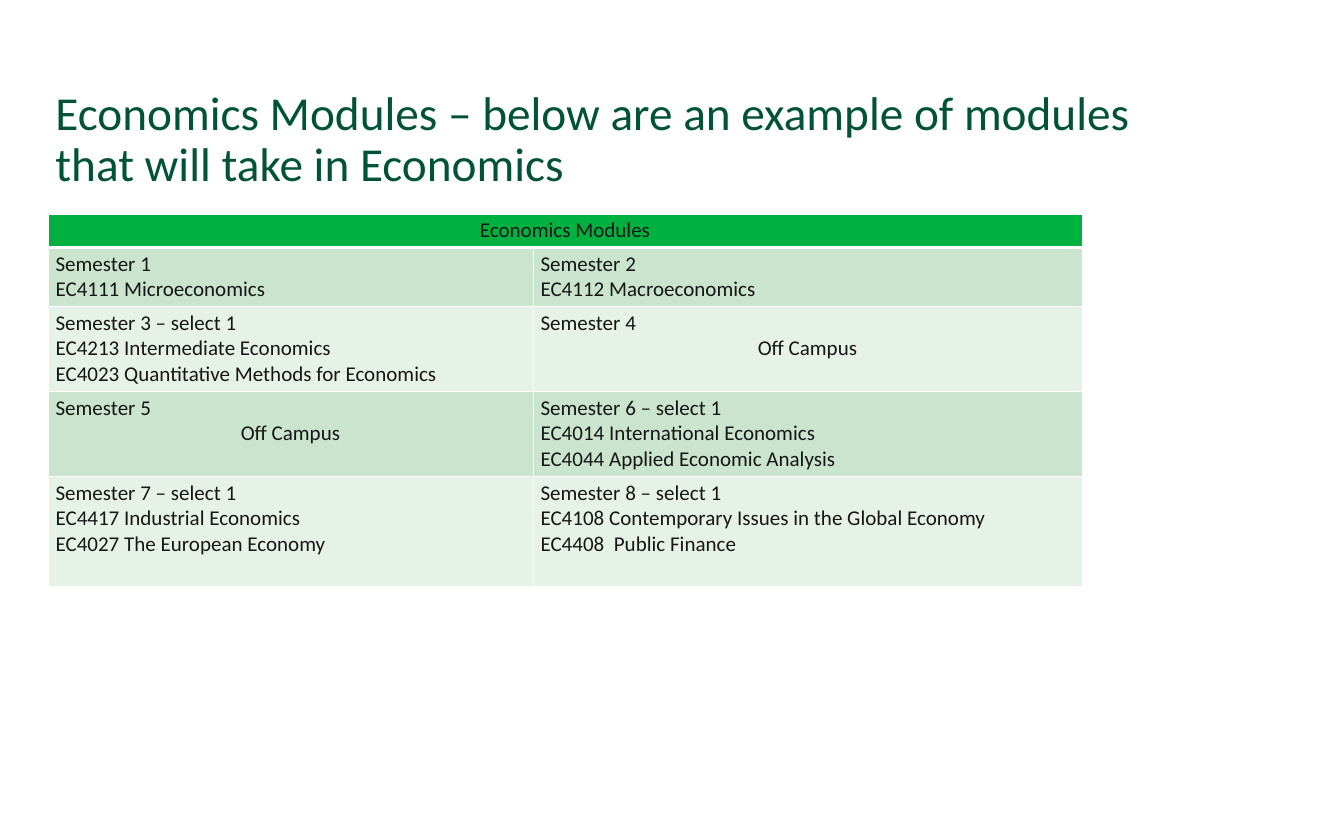
from dataclasses import dataclass

from lxml.etree import SubElement
from pptx import Presentation
from pptx.dml.color import RGBColor
from pptx.enum.text import MSO_ANCHOR, PP_ALIGN
from pptx.oxml.ns import qn
from pptx.util import Emu, Pt

# Content
TITLE = "Economics Modules – below are an example of modules that will take in Economics"
HEADER = "Economics Modules"
OFF_CAMPUS = "Off Campus"
SEMESTERS = [
    ["Semester 1", "EC4111 Microeconomics"],
    ["Semester 2", "EC4112 Macroeconomics"],
    ["Semester 3 – select 1", "EC4213 Intermediate Economics",
     "EC4023 Quantitative Methods for Economics"],
    ["Semester 4", OFF_CAMPUS],
    ["Semester 5", OFF_CAMPUS],
    ["Semester 6 – select 1", "EC4014 International Economics",
     "EC4044 Applied Economic Analysis"],
    ["Semester 7 – select 1", "EC4417 Industrial Economics",
     "EC4027 The European Economy"],
    ["Semester 8 – select 1", "EC4108 Contemporary Issues in the Global Economy",
     "EC4408  Public Finance"],
]

# Layout in px
SLIDE = (1344, 840)
TITLE_BOX = (48, 85, 1159, 111)
TABLE_LEFT, TABLE_TOP = 48, 214
COLUMNS = [485, 549]
ROWS = [33, 59, 85, 85, 110]


@dataclass(frozen=True)
class Theme:
    font: str = "Calibri"
    title_size: int = 45
    table_size: int = 20
    title: str = "005336"
    text: str = "171616"
    header: str = "00B140"
    bands: tuple = ("CAE4CD", "E6F2E8")
    border: str = "FFFFFF"


THEME = Theme()


def px(n):
    return Emu(n * 12095)


def add_text(p, text, size, color):
    r = p.add_run()
    r.text = text
    r.font.name = THEME.font
    r.font.size = Pt(size)
    r.font.bold = False
    r.font.color.rgb = RGBColor.from_string(color)


def set_borders(cell, **widths):
    """Put the side lines before the fill, as the schema asks."""
    tc_pr = cell._tc.get_or_add_tcPr()
    for i, side in enumerate("LRTB"):
        ln = SubElement(tc_pr, qn("a:ln" + side), w=str(Pt(widths.get(side, 1))))
        fill = SubElement(ln, qn("a:solidFill"))
        SubElement(fill, qn("a:srgbClr"), val=THEME.border)
        tc_pr.insert(i, ln)


def fill_cell(cell, lines, color, centred=()):
    cell.fill.solid()
    cell.fill.fore_color.rgb = RGBColor.from_string(color)
    tf = cell.text_frame
    for i, line in enumerate(lines):
        p = tf.paragraphs[0] if i == 0 else tf.add_paragraph()
        p.alignment = PP_ALIGN.CENTER if line in centred else PP_ALIGN.LEFT
        add_text(p, line, THEME.table_size, THEME.text)


def add_title(s):
    tf = s.shapes.add_textbox(*map(px, TITLE_BOX)).text_frame
    tf.word_wrap = True
    tf.vertical_anchor = MSO_ANCHOR.MIDDLE
    p = tf.paragraphs[0]
    p.line_spacing = 0.9
    add_text(p, TITLE, THEME.title_size, THEME.title)


def add_modules(s):
    table = s.shapes.add_table(
        len(ROWS), len(COLUMNS), px(TABLE_LEFT), px(TABLE_TOP),
        px(sum(COLUMNS)), px(sum(ROWS))).table
    for column, width in zip(table.columns, COLUMNS):
        column.width = px(width)
    for row, height in zip(table.rows, ROWS):
        row.height = px(height)

    # Header across both columns
    head = table.cell(0, 0)
    head.merge(table.cell(0, 1))
    head.vertical_anchor = MSO_ANCHOR.MIDDLE
    fill_cell(head, [HEADER], THEME.header, centred=[HEADER])
    for cell in table.rows[0].cells:
        set_borders(cell, B=3)

    # Two semesters a row, in alternating bands
    for i, lines in enumerate(SEMESTERS):
        row, col = divmod(i, len(COLUMNS))
        cell = table.cell(row + 1, col)
        fill_cell(cell, lines, THEME.bands[row % 2], centred=[OFF_CAMPUS])
        set_borders(cell, T=3 if row == 0 else 1)


def main():
    prs = Presentation()
    prs.slide_width, prs.slide_height = map(px, SLIDE)
    s = prs.slides.add_slide(prs.slide_layouts[6])
    add_modules(s)
    add_title(s)
    prs.save("out.pptx")


if __name__ == "__main__":
    main()
